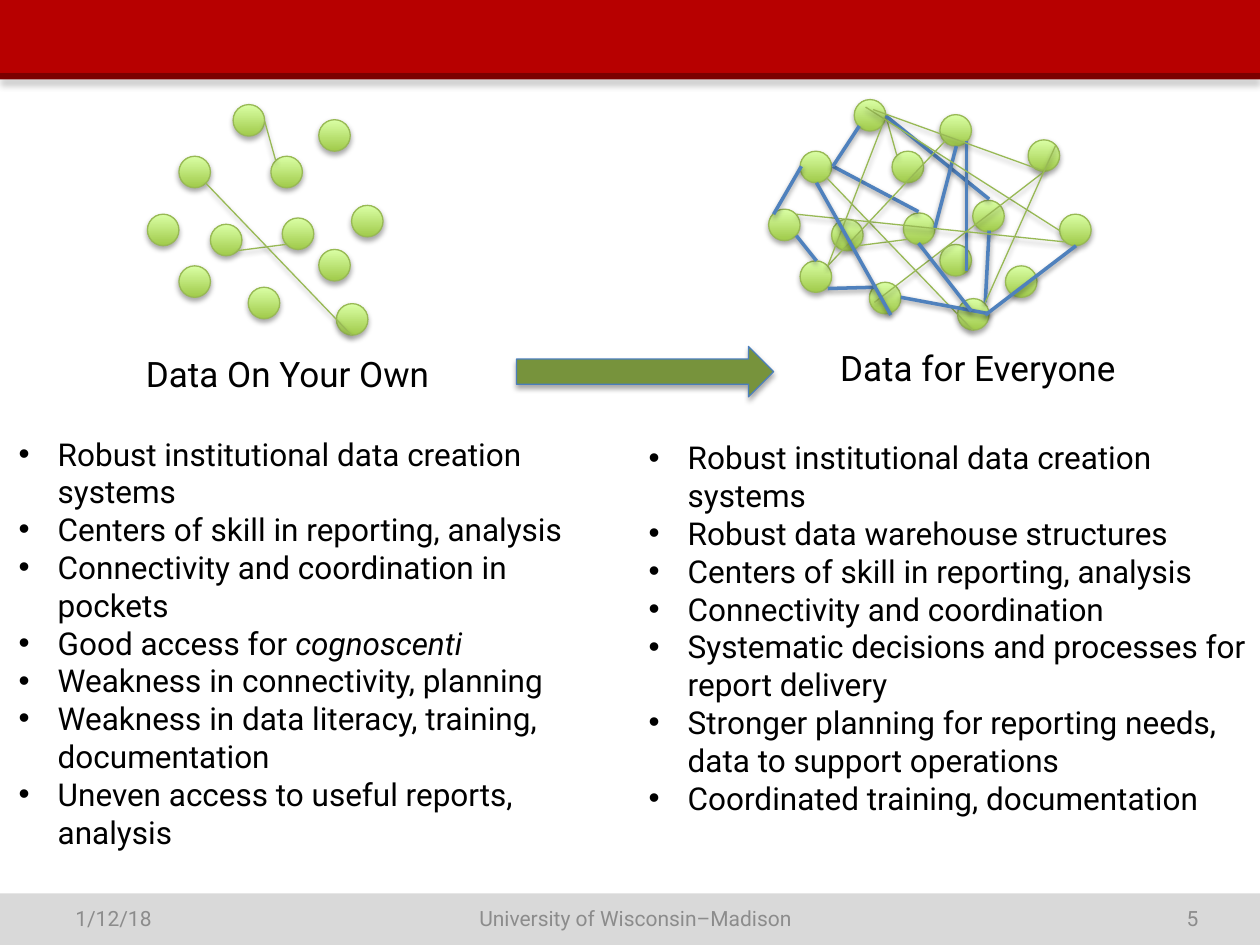
"""Build a slide that contrasts scattered data with shared, connected data."""
import pptx
import pptx.dml.color
import pptx.enum.shapes
import pptx.enum.text
import pptx.oxml.xmlchemy
import pptx.util

RGBColor = pptx.dml.color.RGBColor
MSO_SHAPE = pptx.enum.shapes.MSO_SHAPE
PP_ALIGN = pptx.enum.text.PP_ALIGN
MSO_ANCHOR = pptx.enum.text.MSO_ANCHOR
MSO_AUTO_SIZE = pptx.enum.text.MSO_AUTO_SIZE

BLACK = RGBColor(0x00, 0x00, 0x00)
GRAY = RGBColor(0x8C, 0x8C, 0x8C)
LIGHT_GRAY = RGBColor(0xD9, 0xD9, 0xD9)
RED = RGBColor(0xB7, 0x00, 0x00)
DARK_RED = RGBColor(0x7B, 0x00, 0x00)
NODE_BOTTOM = RGBColor(0xA0, 0xCA, 0x4A)
NODE_TOP = RGBColor(0xDA, 0xFF, 0xA5)
GREEN = RGBColor(0x98, 0xB9, 0x55)
BLUE = RGBColor(0x4F, 0x81, 0xBD)
ARROW_FILL = RGBColor(0x77, 0x93, 0x3C)
ARROW_LINE = RGBColor(0x4B, 0x7E, 0xBC)

FONT = "Roboto"
EMU_PER_PX = 9144
NODE_SIZE = 25
INDENT = 31
THIN, THICK = 0.75, 2
STRIP_SHADOW = (25, 4, 3)
SOFT_SHADOW = (35, 3.1, 1.8)
LINK_SHADOW = (38, 3.1, 1.6)

SHIFT_X, SHIFT_Y = 493, -4
OWN_NODES = [
    (167, 178), (215, 124), (253, 198), (142, 124), (253, 95), (117, 170),
    (197, 228), (279, 163), (142, 211), (224, 173), (185, 83), (267, 241),
]
OWN_LINKS = [(210, 96, 219, 128), (188, 199, 227, 194), (163, 145, 279, 266)]
SHARED_NODES = [(x + SHIFT_X, y + SHIFT_Y) for x, y in OWN_NODES]
SHARED_LINKS = [
    (x1 + SHIFT_X, y1 + SHIFT_Y, x2 + SHIFT_X, y2 + SHIFT_Y)
    for x1, y1, x2, y2 in OWN_LINKS
]
STRONG_LINKS = [
    (661, 132, 729, 168), (648, 207, 632, 187), (694, 228, 657, 229),
    (703, 92, 785, 158), (767, 112, 767, 215), (661, 132, 682, 100),
    (636, 132, 614, 170), (715, 236, 785, 249), (782, 240, 785, 183),
    (742, 181, 759, 116),
]
ADDED_NODES = [(816, 111), (798, 211), (841, 170)]
ADDED_LINKS = [
    (687, 85, 841, 183), (694, 240, 829, 136), (632, 170, 845, 192),
    (693, 87, 829, 136), (750, 112, 657, 211), (700, 100, 657, 211),
    (838, 115, 782, 240),
]
ADDED_STRONG_LINKS = [
    (648, 145, 707, 250), (771, 247, 729, 193), (782, 250, 854, 195),
]

OWN_POINTS = [
    [("Robust institutional data creation systems", False)],
    [("Centers of skill in reporting, analysis", False)],
    [("Connectivity and coordination in pockets", False)],
    [("Good access for ", False), ("cognoscenti", True)],
    [("Weakness in connectivity, planning", False)],
    [("Weakness in data literacy, training, documentation", False)],
    [("Uneven access to useful reports, analysis", False)],
]
SHARED_POINTS = [
    [("Robust institutional data creation systems", False)],
    [("Robust data warehouse structures", False)],
    [("Centers of skill in reporting, analysis", False)],
    [("Connectivity and coordination", False)],
    [("Systematic decisions and processes for report delivery", False)],
    [("Stronger planning for reporting needs, data to support operations", False)],
    [("Coordinated training, documentation", False)],
]


def px(*lengths):
    return [pptx.util.Emu(length * EMU_PER_PX) for length in lengths]


def add_element(parent, tag, **attributes):
    element = pptx.oxml.xmlchemy.OxmlElement(tag)
    for name, value in attributes.items():
        element.set(name, str(value))
    parent.append(element)
    return element


class SlideBuilder:
    """Hold the font and the current slide, and add each kind of element."""

    def __init__(self, slide, font):
        self.slide = slide
        self.shapes = slide.shapes
        self.font = font

    def start_group(self):
        self.shapes = self.slide.shapes.add_group_shape().shapes

    def end_group(self):
        self.shapes = self.slide.shapes

    def set_shadow(self, shape, shadow):
        effects = add_element(shape._element.spPr, "a:effectLst")
        if shadow:
            opacity, blur, distance = shadow
            outer = add_element(
                effects, "a:outerShdw", blurRad=pptx.util.Pt(blur),
                dist=pptx.util.Pt(distance), dir=90 * 60000, rotWithShape=0)
            color = add_element(outer, "a:srgbClr", val=BLACK)
            add_element(color, "a:alpha", val=opacity * 1000)

    def set_line(self, shape, color, width):
        shape.line.color.rgb = color
        shape.line.width = pptx.util.Pt(width)

    def block(self, kind, box, fill, line=None, shadow=None):
        shape = self.shapes.add_shape(kind, *px(*box))
        shape.fill.solid()
        shape.fill.fore_color.rgb = fill
        if line is None:
            shape.line.fill.background()
        else:
            self.set_line(shape, line, THIN)
        self.set_shadow(shape, shadow)

    def node(self, left, top):
        shape = self.shapes.add_shape(
            MSO_SHAPE.OVAL, *px(left, top, NODE_SIZE, NODE_SIZE))
        shape.fill.gradient()
        shape.fill.gradient_angle = 90
        for stop, color in zip(shape.fill.gradient_stops, (NODE_BOTTOM, NODE_TOP)):
            stop.color.rgb = color
        self.set_line(shape, GREEN, THIN)
        self.set_shadow(shape, SOFT_SHADOW)

    def link(self, ends, strong):
        connector = self.shapes.add_connector(
            pptx.enum.shapes.MSO_CONNECTOR.STRAIGHT, *px(*ends))
        self.set_line(connector, BLUE if strong else GREEN, THICK if strong else THIN)
        self.set_shadow(connector, LINK_SHADOW if strong else SOFT_SHADOW)

    def network(self, nodes, links, strong_links):
        for left, top in nodes:
            self.node(left, top)
        for ends in links:
            self.link(ends, False)
        for ends in strong_links:
            self.link(ends, True)

    def text(self, box, paragraphs, size, color=BLACK, align=PP_ALIGN.LEFT,
             anchor=MSO_ANCHOR.TOP, wrap=True, grow=True, bullets=False):
        frame = self.shapes.add_textbox(*px(*box)).text_frame
        frame.word_wrap = wrap
        frame.vertical_anchor = anchor
        if grow:
            frame.auto_size = MSO_AUTO_SIZE.SHAPE_TO_FIT_TEXT
        for index, runs in enumerate(paragraphs):
            paragraph = frame.add_paragraph() if index else frame.paragraphs[0]
            paragraph.alignment = align
            if bullets:
                properties = paragraph._p.get_or_add_pPr()
                indent, = px(INDENT)
                properties.set("marL", str(indent))
                properties.set("indent", str(-indent))
                add_element(properties, "a:buFont", typeface="Arial")
                add_element(properties, "a:buChar", char="•")
            for words, italic in runs:
                run = paragraph.add_run()
                run.text = words
                run.font.name = self.font
                run.font.size = pptx.util.Pt(size)
                run.font.italic = italic
                run.font.color.rgb = color


def main():
    presentation = pptx.Presentation()
    presentation.slide_width, presentation.slide_height = px(1000, 750)
    slide = presentation.slides.add_slide(presentation.slide_layouts[6])
    builder = SlideBuilder(slide, FONT)

    builder.block(MSO_SHAPE.RECTANGLE, (0, 709, 1000, 43), LIGHT_GRAY)
    builder.block(MSO_SHAPE.RECTANGLE, (0, 0, 1000, 60), RED)
    builder.block(MSO_SHAPE.RECTANGLE, (0, 58, 1000, 5), DARK_RED, shadow=STRIP_SHADOW)
    for left, width, words, align in [
        (50, 233, "1/12/18", PP_ALIGN.LEFT),
        (346, 317, "University of Wisconsin–Madison", PP_ALIGN.CENTER),
        (728, 233, "5", PP_ALIGN.RIGHT),
    ]:
        builder.text((left, 709, width, 40), [[(words, False)]], 12, GRAY, align,
                     MSO_ANCHOR.MIDDLE, grow=False)

    builder.start_group()
    builder.network(OWN_NODES, OWN_LINKS, [])
    builder.start_group()
    builder.network(SHARED_NODES, SHARED_LINKS, STRONG_LINKS)
    builder.network(ADDED_NODES, ADDED_LINKS, ADDED_STRONG_LINKS)
    builder.end_group()

    builder.text((106, 275, 254, 44), [[("Data On Your Own", False)]], 20, wrap=False)
    builder.text((657, 270, 246, 44), [[("Data for Everyone", False)]], 20, wrap=False)
    builder.block(MSO_SHAPE.RIGHT_ARROW, (410, 275, 204, 40), ARROW_FILL,
                  ARROW_LINE, SOFT_SHADOW)
    builder.text((5, 340, 495, 343), OWN_POINTS, 18, bullets=True)
    builder.text((505, 343, 495, 313), SHARED_POINTS, 18, bullets=True)

    presentation.save("out.pptx")


if __name__ == "__main__":
    main()
